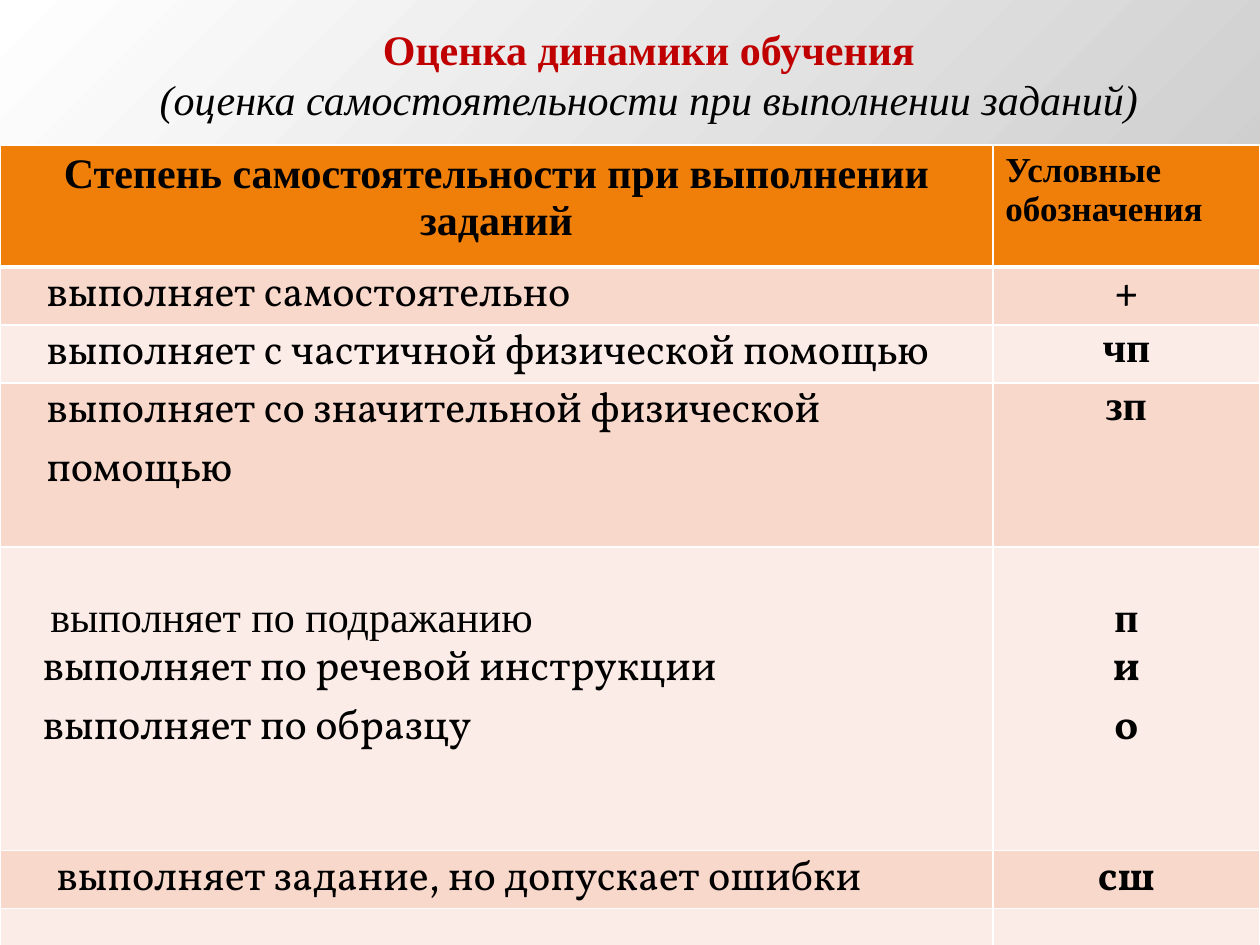
"""Build a slide with a table of marks for how independently tasks are done."""
from lxml.etree import SubElement
from pptx import Presentation
from pptx.dml.color import RGBColor
from pptx.enum.text import MSO_ANCHOR, PP_ALIGN
from pptx.oxml import parse_xml
from pptx.oxml.ns import nsdecls, qn
from pptx.util import Inches, Pt

SERIF = "Times New Roman"
BOOK = "Vollkorn"
HEADER, DARK_BAND, LIGHT_BAND = "F07F09", "F9D8CC", "FCECE7"


def color(value):
    return RGBColor.from_string(value)


def add_span(para, text, font=SERIF, size=24, bold=False, italic=False, ink="000000"):
    span = para.add_run()
    span.text = text
    span.font.name = font
    span.font.size = Pt(size)
    span.font.bold = bold
    span.font.italic = italic
    span.font.color.rgb = color(ink)


deck = Presentation()
deck.slide_width, deck.slide_height = Inches(10), Inches(7.5)
page = deck.slides.add_slide(deck.slide_layouts[6])

backdrop = page.background.fill
backdrop.gradient()
for stop, shade in zip(backdrop.gradient_stops, ("FFFFFF", "B4B4B4")):
    stop.color.rgb = color(shade)
linear = next(page.background.element.iter(qn("a:lin"))) if hasattr(page.background, "element") else next(page.element.iter(qn("a:lin")))
circle = parse_xml(
    f'<a:path {nsdecls("a")} path="circle"><a:fillToRect r="100000" b="100000"/></a:path>'
)
linear.getparent().replace(linear, circle)

box = page.shapes.add_textbox(Inches(0.47), Inches(0), Inches(9.36), Inches(1.17))
box.text_frame.word_wrap = True
box.text_frame.vertical_anchor = MSO_ANCHOR.MIDDLE
para = box.text_frame.paragraphs[0]
para.alignment = PP_ALIGN.CENTER
add_span(para, "Оценка динамики обучения", bold=True, ink="C00000")
para.add_line_break()
add_span(para, "(оценка самостоятельности при выполнении заданий)", italic=True)

# Each row: height, top inset, left lines (text, font, indent), right lines (mark, font)
rows = [
    (0.97, 0.05, [("Степень самостоятельности при выполнении заданий", SERIF, 0)],
     [("Условные обозначения", SERIF)]),
    (0.46, 0, [("выполняет самостоятельно", BOOK, 0.3)], [("+", BOOK)]),
    (0.46, 0, [("выполняет с частичной физической помощью", BOOK, 0.3)], [("чп", SERIF)]),
    (1.3, 0, [("выполняет со значительной физической помощью", BOOK, 0.3)], [("зп", SERIF)]),
    (2.41, 0.38, [("выполняет по подражанию", SERIF, 0.33),
                  ("выполняет по речевой инструкции", BOOK, 0.27),
                  ("выполняет по образцу", BOOK, 0.27)],
     [("п", SERIF), ("и", BOOK), ("о", BOOK)]),
    (0.46, 0, [("выполняет задание, но допускает ошибки", BOOK, 0.38)], [("сш", BOOK)]),
    (0.28, 0, [], []),
]
frame = page.shapes.add_table(len(rows), 2, Inches(0), Inches(1.15), Inches(10), Inches(6.34))
table = frame.table
table.columns[0].width, table.columns[1].width = Inches(7.88), Inches(2.12)

for row_index, (height, top_inset, tasks, marks) in enumerate(rows):
    table.rows[row_index].height = Inches(height)
    is_header = row_index == 0
    band = HEADER if is_header else (DARK_BAND if row_index % 2 else LIGHT_BAND)
    for column, lines in enumerate((tasks, [(*mark, 0) for mark in marks])):
        cell = table.cell(row_index, column)
        cell.fill.solid()
        cell.fill.fore_color.rgb = color(band)
        cell.margin_left = cell.margin_right = Inches(0.1 if is_header else 0.07)
        cell.margin_top = Inches(top_inset)
        cell.margin_bottom = Inches(0.05 if is_header else 0)
        for line_index, (text, font, indent) in enumerate(lines):
            body = cell.text_frame
            para = body.add_paragraph() if line_index else body.paragraphs[0]
            centered = is_header != (column == 1)
            para.alignment = PP_ALIGN.CENTER if centered else PP_ALIGN.LEFT
            if indent:
                para._p.get_or_add_pPr().set("marL", str(Inches(indent)))
            size = 20 if is_header and column else 24
            add_span(para, text, font, size, bold=is_header or column == 1)
        properties = cell._tc.get_or_add_tcPr()
        for position, side in enumerate(("lnL", "lnR", "lnT", "lnB")):
            thick = (is_header and side == "lnB") or (row_index == 1 and side == "lnT")
            border = SubElement(properties, qn(f"a:{side}"), w=str(Pt(3 if thick else 1)))
            SubElement(SubElement(border, qn("a:solidFill")), qn("a:srgbClr"), val="FFFFFF")
            properties.insert(position, border)

deck.save("out.pptx")
